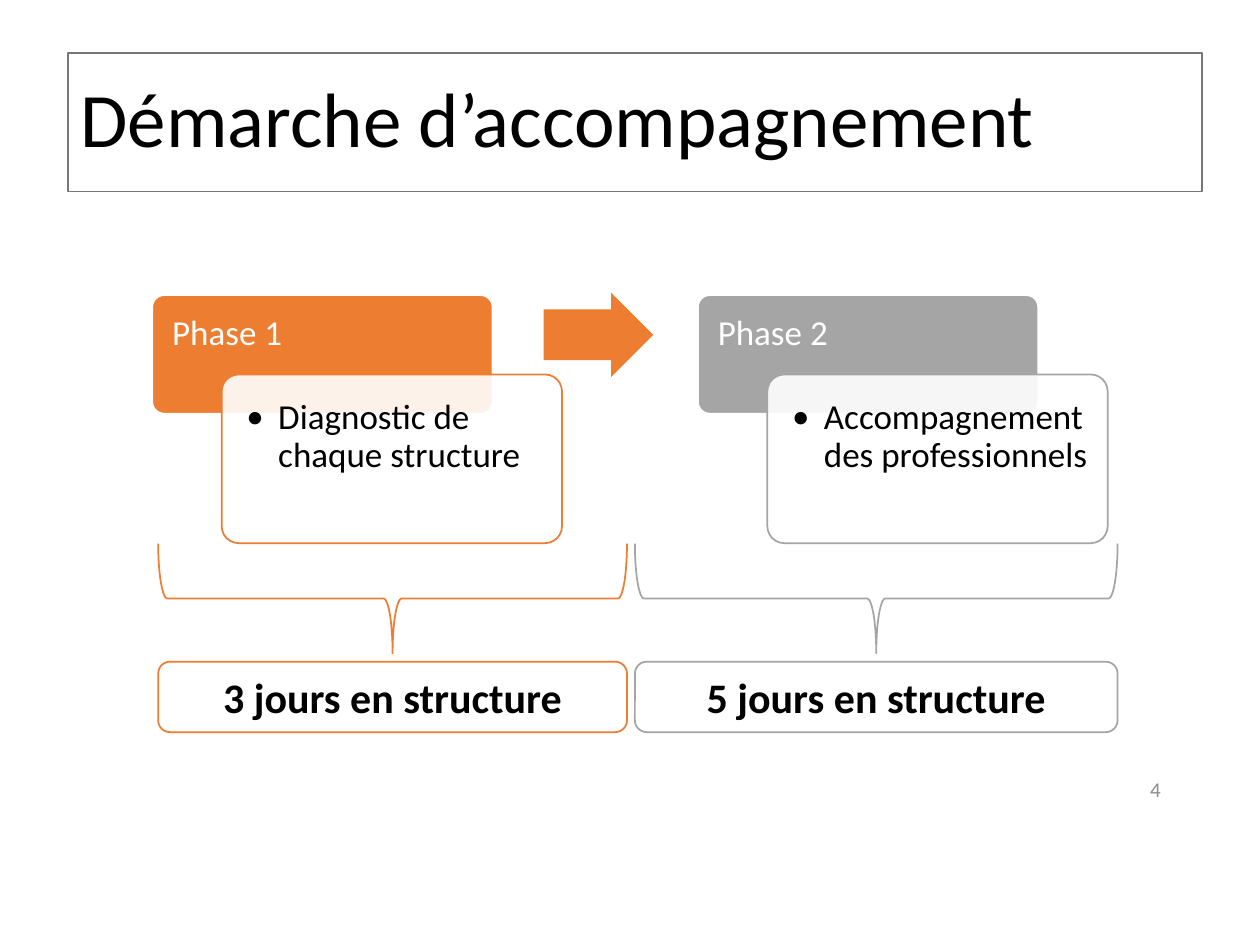
"""Build the slide on the two phases of the support process."""
import pptx
import pptx.dml.color
import pptx.enum.shapes
import pptx.enum.text
import pptx.oxml.ns
import pptx.util
from lxml import etree

Cm = pptx.util.Cm
RGBColor = pptx.dml.color.RGBColor
Shape = pptx.enum.shapes.MSO_SHAPE
Align = pptx.enum.text.PP_ALIGN
Anchor = pptx.enum.text.MSO_ANCHOR
qn = pptx.oxml.ns.qn

BLACK = RGBColor(0x00, 0x00, 0x00)
WHITE = RGBColor(0xFF, 0xFF, 0xFF)
ORANGE = RGBColor(0xED, 0x7D, 0x31)
GRAY = RGBColor(0xA5, 0xA5, 0xA5)
TITLE_BORDER = RGBColor(0x77, 0x77, 0x77)
NUMBER_GRAY = RGBColor(0x8C, 0x8C, 0x8C)

PHASE_LEFT, PHASE_TOP, PHASE_STEP = 3.07, 5.95, 11
PHASE_WIDTH, PHASE_HEIGHT = 6.86, 2.39
CARD_SHIFT, CARD_DROP, CARD_HEIGHT, CARD_MARGIN = 1.4, 1.6, 3.4, 0.1
BRACE_TOP, BRACE_HEIGHT = 10.96, 2.21
LABEL_TOP, LABEL_HEIGHT = 13.34, 1.42
PHASES = [
    ("Phase 1", "Diagnostic de chaque structure", ORANGE,
     "3 jours en structure", 3.19, 9.45),
    ("Phase 2", "Accompagnement des professionnels", GRAY,
     "5 jours en structure", 12.8, 9.73),
]


def write_text(shape, text, *, size=20, color=BLACK, bold=False, font="Calibri",
               align=Align.LEFT, anchor=Anchor.TOP, spacing=None,
               bullet=False, margins=None):
    """Put one formatted paragraph into a shape."""
    frame = shape.text_frame
    frame.word_wrap = True
    frame.auto_size = pptx.enum.text.MSO_AUTO_SIZE.NONE
    frame.vertical_anchor = anchor
    if margins:
        (frame.margin_left, frame.margin_top,
         frame.margin_right, frame.margin_bottom) = map(Cm, margins)
    paragraph = frame.paragraphs[0]
    if bullet:
        properties = paragraph._p.get_or_add_pPr()
        properties.set("marL", str(Cm(0.64)))
        properties.set("indent", str(-Cm(0.64)))
        etree.SubElement(properties, qn("a:buFont")).set("typeface", font)
        etree.SubElement(properties, qn("a:buChar")).set("char", "•")
    paragraph.alignment = align
    paragraph.line_spacing = spacing
    run = paragraph.add_run()
    run.text = text
    run.font.name = font
    run.font.size = pptx.util.Pt(size)
    run.font.bold = bold
    run.font.color.rgb = color


class SlideBuilder:
    """Hold the line style and the current slide."""

    def __init__(self, slide, line_width=1):
        """Keep the slide and the outline width."""
        self.slide = slide
        self.line_width = pptx.util.Pt(line_width)

    def paint(self, shape, fill=None, line=None, opacity=100):
        """Set the fill and the outline of a shape."""
        if fill is None:
            shape.fill.background()
        else:
            shape.fill.solid()
            shape.fill.fore_color.rgb = fill
            if opacity < 100:
                color = shape.fill._xPr.find(".//" + qn("a:srgbClr"))
                alpha = etree.SubElement(color, qn("a:alpha"))
                alpha.set("val", str(opacity * 1000))
        if line is None:
            shape.line.fill.background()
        else:
            shape.line.color.rgb = line
            shape.line.width = self.line_width

    def title(self, text, box):
        """Place and format the title placeholder."""
        shape = self.slide.shapes.title
        shape.left, shape.top, shape.width, shape.height = map(Cm, box)
        self.paint(shape, WHITE, TITLE_BORDER)
        write_text(shape, text, size=44, anchor=Anchor.MIDDLE, spacing=0.9)

    def shape(self, kind, box, adjustments=(), **colors):
        """Add a preset shape without a shadow."""
        shape = self.slide.shapes.add_shape(kind, *map(Cm, box))
        shape.shadow.inherit = False
        for index, value in enumerate(adjustments):
            shape.adjustments[index] = value
        self.paint(shape, **colors)
        return shape

    def text(self, text, box, **style):
        """Add a text box."""
        shape = self.slide.shapes.add_textbox(*map(Cm, box))
        write_text(shape, text, **style)

    def phase(self, left, name, content, color):
        """Add a phase header with its overlapping card."""
        self.shape(Shape.ROUNDED_RECTANGLE,
                   (left, PHASE_TOP, PHASE_WIDTH, PHASE_HEIGHT),
                   [0.1], fill=color, line=WHITE)
        self.text(name, (left, PHASE_TOP, PHASE_WIDTH, CARD_DROP),
                  color=WHITE, spacing=0.9, margins=(0.4, 0.4, 0.4, 0.2))
        card_left, card_top = left + CARD_SHIFT, PHASE_TOP + CARD_DROP
        self.shape(Shape.ROUNDED_RECTANGLE,
                   (card_left, card_top, PHASE_WIDTH, CARD_HEIGHT),
                   [0.1], fill=WHITE, line=color, opacity=90)
        self.text(content,
                  (card_left + CARD_MARGIN, card_top + CARD_MARGIN,
                   PHASE_WIDTH - 2 * CARD_MARGIN, CARD_HEIGHT - 2 * CARD_MARGIN),
                  spacing=0.9, bullet=True, margins=(0.4, 0.4, 0.2, 0.4))

    def duration(self, left, width, text, color):
        """Add a downward brace and the duration below it."""
        turn = (width - BRACE_HEIGHT) / 2
        brace = self.shape(Shape.LEFT_BRACE,
                           (left + turn, BRACE_TOP - turn, BRACE_HEIGHT, width),
                           line=color)
        brace.rotation = 270
        label = self.shape(Shape.ROUNDED_RECTANGLE,
                           (left, LABEL_TOP, width, LABEL_HEIGHT),
                           fill=WHITE, line=color)
        write_text(label, text, size=24, bold=True, align=Align.CENTER,
                   anchor=Anchor.MIDDLE)


def main():
    """Create the presentation and save it."""
    presentation = pptx.Presentation()
    presentation.slide_width, presentation.slide_height = Cm(25.4), Cm(19.05)
    slide = presentation.slides.add_slide(presentation.slide_layouts[5])
    builder = SlideBuilder(slide)
    builder.title("Démarche d’accompagnement", (1.37, 1.07, 22.86, 2.79))
    for index, (name, content, color, days, left, width) in enumerate(PHASES):
        builder.phase(PHASE_LEFT + index * PHASE_STEP, name, content, color)
        builder.duration(left, width, days, color)
    builder.shape(Shape.RIGHT_ARROW, (10.96, 5.9, 2.21, 1.7), [0.6, 0.5],
                  fill=ORANGE)
    builder.text("4", (17.93, 15.39, 5.72, 1.02), size=12, color=NUMBER_GRAY,
                 align=Align.RIGHT, anchor=Anchor.MIDDLE)
    presentation.save("out.pptx")


if __name__ == "__main__":
    main()
